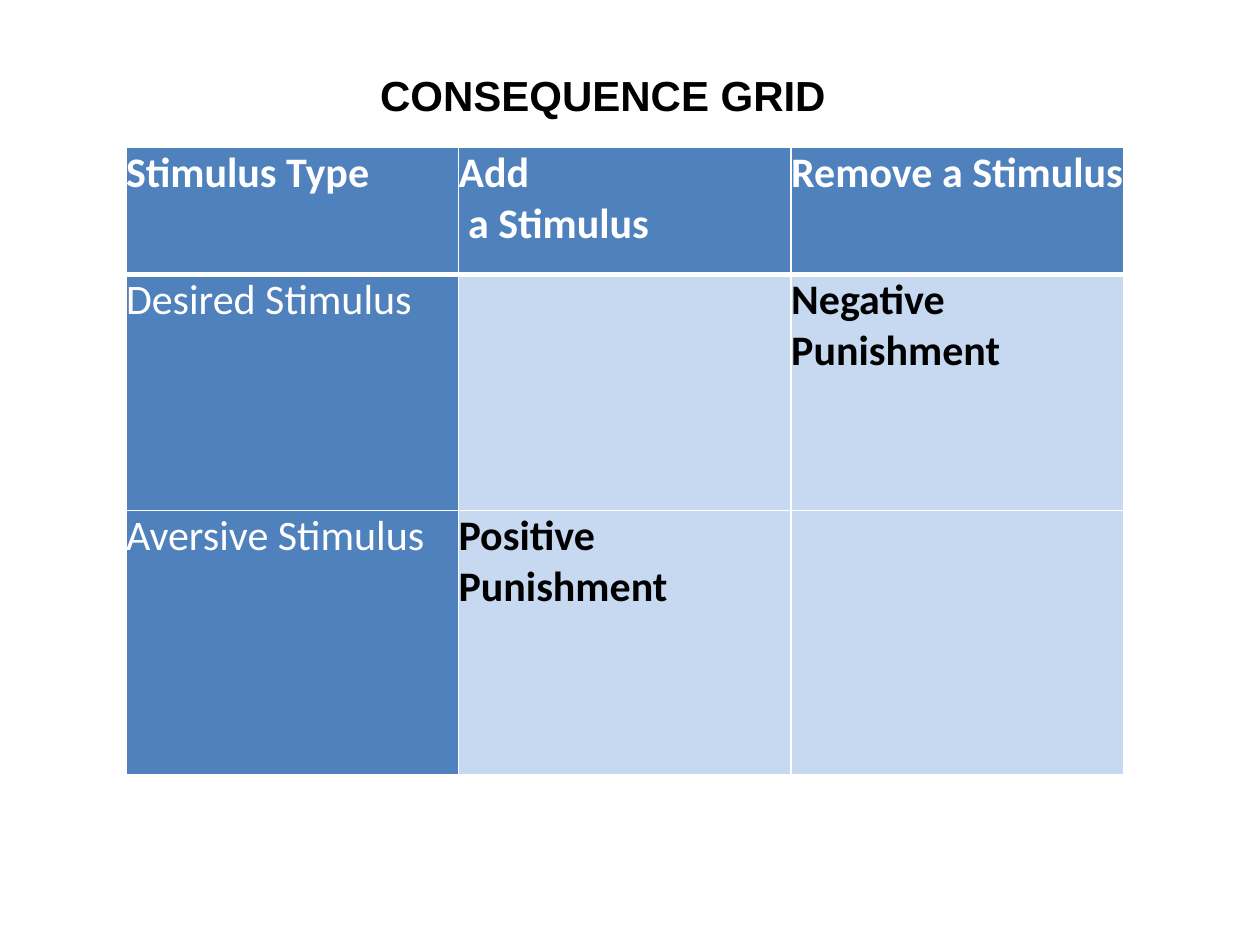
from lxml import etree
from pptx import Presentation
from pptx import util as u
from pptx.dml.color import RGBColor
from pptx.enum import text
from pptx.oxml import ns

BLUE = RGBColor(0x4F, 0x81, 0xBD)
PALE = RGBColor(0xC6, 0xD9, 0xF1)
WHITE = RGBColor(0xFF, 0xFF, 0xFF)
BLACK = RGBColor(0, 0, 0)

# Each cell holds its paragraphs, separated by line breaks
GRID = [
    ["Stimulus Type", "Add\n a Stimulus", "Remove a Stimulus"],
    ["Desired Stimulus", "", "Negative Punishment"],
    ["Aversive Stimulus", "Positive Punishment", ""],
]
COL_WIDTH = 190.08
ROW_HEIGHTS = [72.72, 134.64, 151.2]


class Deck:
    """Holds the text style and the current slide."""

    def __init__(self, prs):
        self.s = prs.slides.add_slide(prs.slide_layouts[5])
        self.size = u.Pt(24)

    def style(self, p, font, color, bold):
        p.alignment = text.PP_ALIGN.LEFT
        for r in p.runs:
            r.font.color.rgb = color
            for name, value in dict(name=font, size=self.size, bold=bold).items():
                setattr(r.font, name, value)

    def title(self, words, left, top, width, height):
        sp = self.s.shapes.title
        for name, value in dict(left=left, top=top, width=width, height=height).items():
            setattr(sp, name, u.Pt(value))
        tf = sp.text_frame
        tf.text = words
        tf.word_wrap = True
        tf.auto_size = text.MSO_AUTO_SIZE.NONE
        tf.vertical_anchor = text.MSO_ANCHOR.MIDDLE
        self.style(tf.paragraphs[0], "Arial", BLACK, True)

    def borders(self, cell, **widths):
        """Draw white cell edges; they must come before the fill."""
        tc_pr = cell._tc.get_or_add_tcPr()
        for i, (edge, width) in enumerate(widths.items()):
            ln = etree.Element(ns.qn(f"a:ln{edge}"), w=str(u.Pt(width)))
            fill = etree.SubElement(ln, ns.qn("a:solidFill"))
            etree.SubElement(fill, ns.qn("a:srgbClr"), val=str(WHITE))
            tc_pr.insert(i, ln)

    def cell(self, cell, words, fill, color, bold):
        for side in ("left", "right", "top", "bottom"):
            setattr(cell, f"margin_{side}", 0)
        cell.fill.solid()
        cell.fill.fore_color.rgb = fill
        cell.text_frame.text = words
        for p in cell.text_frame.paragraphs:
            self.style(p, "Calibri", color, bold)

    def table(self, rows, left, top, col_width, heights):
        n = len(rows[0])
        frame = self.s.shapes.add_table(len(rows), n, u.Pt(left), u.Pt(top),
                                        u.Pt(col_width * n), u.Pt(sum(heights)))
        tbl = frame.table
        for col in tbl.columns:
            col.width = u.Pt(col_width)
        for i, row in enumerate(rows):
            tbl.rows[i].height = u.Pt(heights[i])
            for j, words in enumerate(row):
                label = i == 0 or j == 0
                cell = tbl.cell(i, j)
                self.cell(cell, words, BLUE if label else PALE,
                          WHITE if label else BLACK, i == 0 or j > 0)
                # A thick rule sits under the header row
                self.borders(cell, L=1, R=1, T=3 if i == 1 else 1,
                             B=3 if i == 0 else 1)


def main():
    prs = Presentation()
    prs.slide_width, prs.slide_height = u.Pt(720), u.Pt(540)
    deck = Deck(prs)
    # Heading
    deck.title("CONSEQUENCE GRID", 210, 36, 271.44, 36.72)
    # Stimulus by consequence
    deck.table(GRID, 72, 84.24, COL_WIDTH, ROW_HEIGHTS)
    prs.save("out.pptx")


if __name__ == "__main__":
    main()
